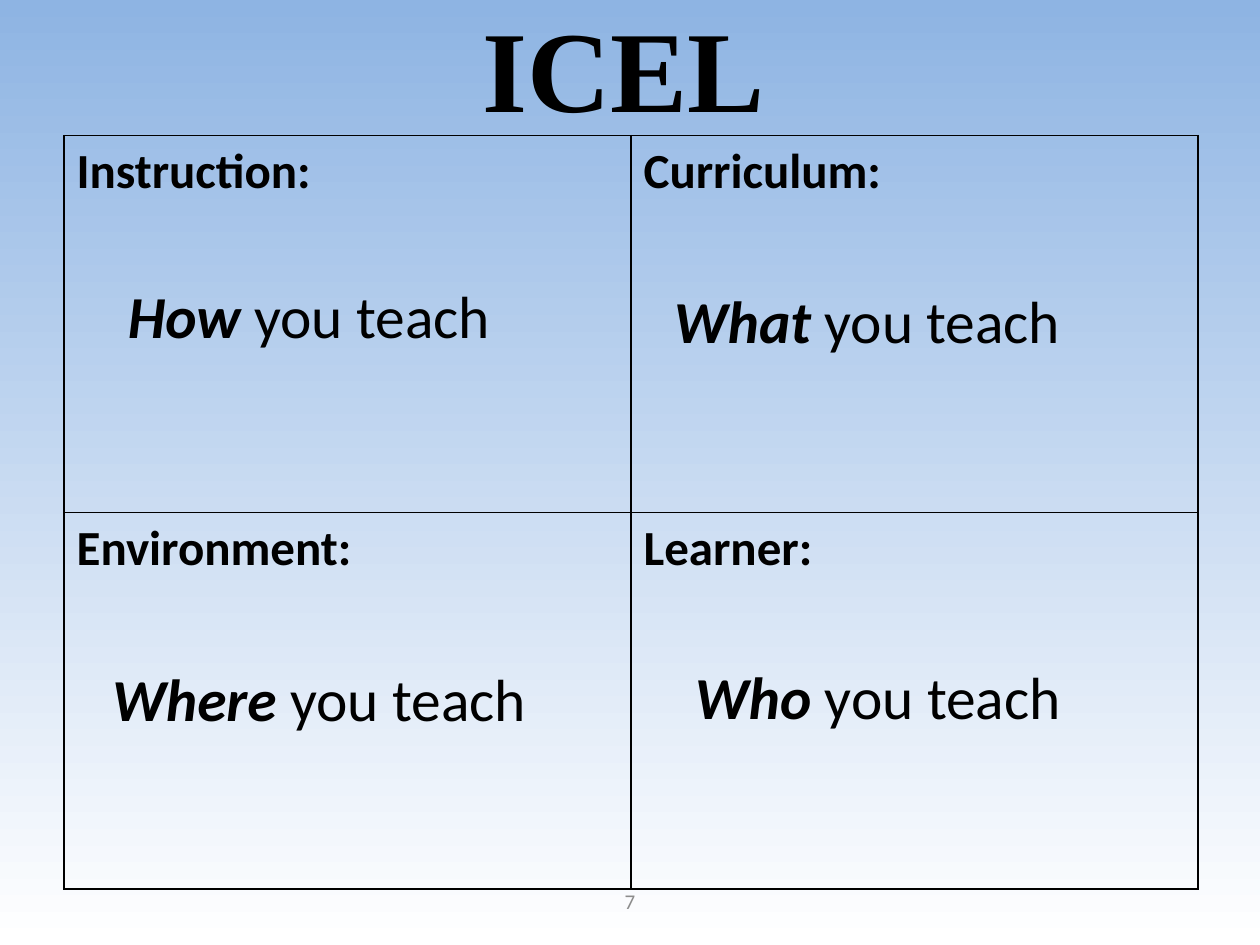
from dataclasses import dataclass

from lxml import etree
from pptx import Presentation
from pptx import util as u
from pptx.dml.color import RGBColor
from pptx.enum import text
from pptx.oxml import parse_xml

Pt = u.Pt
DRAWING_NS = "http://schemas.openxmlformats.org/drawingml/2006/main"


@dataclass(frozen=True)
class Theme:
    ink: str = "000000"
    muted: str = "8C8C8C"
    sky: str = "8EB4E3"
    ground: str = "FFFFFF"
    body_font: str = "Calibri"
    title_font: str = "Times New Roman"
    title_size: int = 66
    answer_size: int = 34
    heading_size: int = 28
    number_size: int = 12
    border: int = 1


class SlideBuilder:
    def __init__(self, page, theme):
        self.page = page
        self.theme = theme

    def background(self):
        fill = self.page.background.fill
        fill.gradient()
        fill.gradient_angle = 90
        for stop, color in zip(fill.gradient_stops, (self.theme.ground, self.theme.sky)):
            stop.color.rgb = RGBColor.from_string(color)

    def style(self, span, size, color=None, font=None, bold=False, italic=False):
        span.font.size = Pt(size)
        span.font.name = font or self.theme.body_font
        span.font.color.rgb = RGBColor.from_string(color or self.theme.ink)
        span.font.bold = bold
        span.font.italic = italic

    def text_box(self, left, top, width, height, grow=True):
        box = self.page.shapes.add_textbox(Pt(left), Pt(top), Pt(width), Pt(height))
        frame = box.text_frame
        frame.word_wrap = True
        if grow:
            frame.auto_size = text.MSO_AUTO_SIZE.SHAPE_TO_FIT_TEXT
        return frame

    def title(self, words, *place):
        para = self.text_box(*place).paragraphs[0]
        para.text = words
        para.alignment = text.PP_ALIGN.CENTER
        self.style(para.runs[0], self.theme.title_size, font=self.theme.title_font, bold=True)

    def page_number(self, number, *place):
        frame = self.text_box(*place, grow=False)
        frame.vertical_anchor = text.MSO_ANCHOR.MIDDLE
        para = frame.paragraphs[0]
        para.text = str(number)
        para.alignment = text.PP_ALIGN.CENTER
        self.style(para.runs[0], self.theme.number_size, color=self.theme.muted)

    def answer(self, key_word, rest, *place):
        para = self.text_box(*place).paragraphs[0]
        for words, strong in ((key_word + " ", True), (rest, False)):
            span = para.add_run()
            span.text = words
            self.style(span, self.theme.answer_size, bold=strong, italic=strong)

    def table(self, rows, left, top, width, height):
        grid = self.page.shapes.add_table(
            len(rows), len(rows[0]), Pt(left), Pt(top), Pt(width), Pt(height)
        ).table
        grid.first_row = grid.horz_banding = False
        for row_index, headings in enumerate(rows):
            for column_index, heading in enumerate(headings):
                cell = grid.cell(row_index, column_index)
                cell.text_frame.text = heading
                self.style(cell.text_frame.paragraphs[0].runs[0],
                           self.theme.heading_size, bold=True)
                cell.fill.background()
                self.cell_borders(cell)

    def cell_borders(self, cell):
        properties = cell._tc.get_or_add_tcPr()
        for position, side in enumerate("LRTB"):
            line = parse_xml(f'<a:ln{side} xmlns:a="{DRAWING_NS}" w="{Pt(self.theme.border)}"/>')
            solid = etree.SubElement(line, f"{{{DRAWING_NS}}}solidFill")
            etree.SubElement(solid, f"{{{DRAWING_NS}}}srgbClr", val=self.theme.ink)
            properties.insert(position, line)


def main():
    deck = Presentation()
    deck.slide_width, deck.slide_height = Pt(720), Pt(540)
    builder = SlideBuilder(deck.slides.add_slide(deck.slide_layouts[6]), Theme())
    builder.background()

    # Page number
    builder.page_number(7, 276, 500.5, 168, 28.8)

    # Four-part grid
    builder.table(
        [["Instruction:", "Curriculum:"], ["Environment:", "Learner:"]],
        36.6, 77.5, 648, 430.6,
    )

    # One answer in each quarter
    for key_word, left, top, width in (
        ("How", 66, 156, 270),
        ("What", 378, 159, 288),
        ("Where", 57, 375, 300),
        ("Who", 390, 373.5, 270),
    ):
        builder.answer(key_word, "you teach", left, top, width, 48.5)

    # Title
    builder.title("ICEL", -3.6, -5, 720, 87)

    deck.save("out.pptx")


if __name__ == "__main__":
    main()
